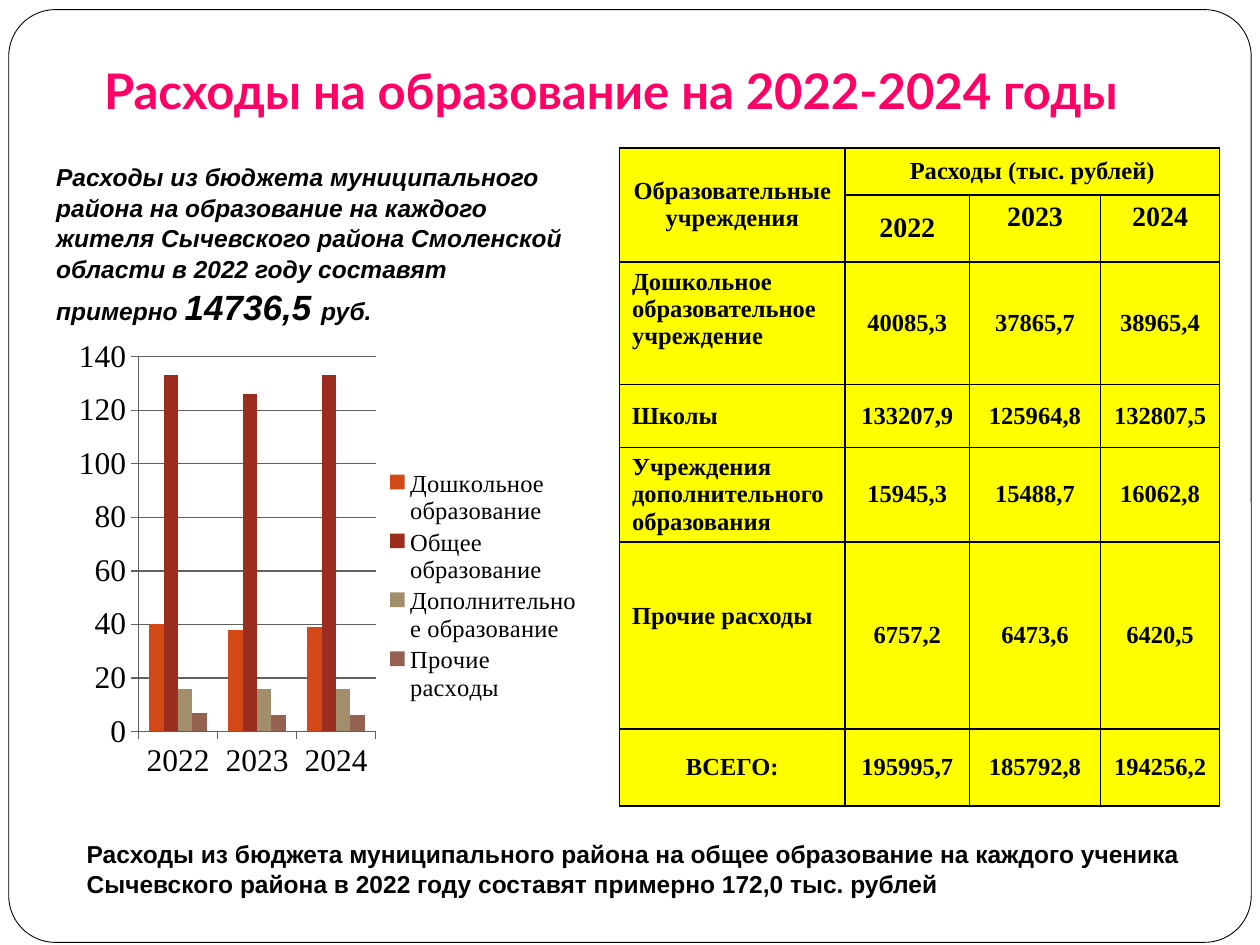
from lxml import etree
from pptx import Presentation
from pptx.chart.data import CategoryChartData
from pptx.dml.color import RGBColor
from pptx.enum.chart import XL_CHART_TYPE as ChartType, XL_LEGEND_POSITION as LegendPosition
from pptx.enum.shapes import MSO_SHAPE as Shape
from pptx.enum.text import MSO_ANCHOR as Anchor, MSO_AUTO_SIZE as AutoSize, PP_ALIGN as Align
from pptx.oxml.ns import qn
from pptx.util import Pt

SERIF = "Times New Roman"
BLACK, WHITE, YELLOW, PINK, GRID = "000000", "FFFFFF", "FFFF00", "FF0066", "606060"

COLUMN_WIDTHS = [129, 71, 75, 68]
ROW_HEIGHTS = [27, 38, 70, 36, 54, 107, 44]
EXPENSES = [
    ["Образовательные учреждения", "Расходы (тыс. рублей)", "", ""],
    ["", "2022", "2023", "2024"],
    ["Дошкольное образовательное учреждение", "40085,3", "37865,7", "38965,4"],
    ["Школы", "133207,9", "125964,8", "132807,5"],
    ["Учреждения \nдополнительного\nобразования", "15945,3", "15488,7", "16062,8"],
    ["Прочие расходы", "6757,2", "6473,6", "6420,5"],
    ["ВСЕГО:", "195995,7", "185792,8", "194256,2"],
]
YEARS = ["2022", "2023", "2024"]
SERIES = [
    ("Дошкольное образование", [40, 38, 39], "D34817"),
    ("Общее образование", [133, 126, 133], "9B2D1F"),
    ("Дополнительное образование", [16, 16, 16], "A28E6A"),
    ("Прочие расходы", [7, 6, 6], "956251"),
]


def color(value):
    return RGBColor.from_string(value)


def points(*lengths):
    return [Pt(length) for length in lengths]


def format_font(font, size, name=SERIF, fill=BLACK, bold=False, italic=False):
    font.size, font.name = Pt(size), name
    font.bold, font.italic = bold, italic
    font.color.rgb = color(fill)


def add_text(paragraph, text, align=None, spacing=None, **font_format):
    run = paragraph.add_run()
    run.text = text
    format_font(run.font, **font_format)
    if align is not None:
        paragraph.alignment = align
    if spacing is not None:
        paragraph.line_spacing = spacing


def add_frame(slide):
    frame = slide.shapes.add_shape(Shape.ROUNDED_RECTANGLE, *points(5, 5.5, 710, 533))
    frame.adjustments[0] = 0.05
    frame.shadow.inherit = False
    frame.fill.solid()
    frame.fill.fore_color.rgb = color(WHITE)
    frame.line.color.rgb = color(BLACK)
    frame.line.width = Pt(0.5)
    slide.shapes._spTree.insert(2, frame._element)


def set_title(slide, text):
    title = slide.shapes.title
    title.left, title.top, title.width, title.height = points(0, 20, 698, 55.5)
    text_frame = title.text_frame
    text_frame.auto_size = AutoSize.NONE
    text_frame.vertical_anchor = Anchor.BOTTOM
    text_frame.margin_bottom = Pt(7.2)
    add_text(text_frame.paragraphs[0], text, align=Align.CENTER,
             size=28, name="Lato", fill=PINK, bold=True)


def add_note(slide, place, runs, italic=False):
    """Add a text box whose runs are (text, size) pairs."""
    text_frame = slide.shapes.add_textbox(*points(*place)).text_frame
    text_frame.word_wrap = True
    text_frame.vertical_anchor = Anchor.MIDDLE
    for text, size in runs:
        add_text(text_frame.paragraphs[0], text, spacing=1.05,
                 size=size, name="Arial", bold=True, italic=italic)


def set_borders(cell):
    properties = cell._tc.get_or_add_tcPr()
    for index, side in enumerate(("lnL", "lnR", "lnT", "lnB")):
        line = etree.Element(qn(f"a:{side}"), w=str(Pt(1)))
        fill = etree.SubElement(line, qn("a:solidFill"))
        etree.SubElement(fill, qn("a:srgbClr"), val=BLACK)
        properties.insert(index, line)


def fill_cell(cell, text, size, align, anchor):
    cell.fill.solid()
    cell.fill.fore_color.rgb = color(YELLOW)
    cell.vertical_anchor = anchor
    set_borders(cell)
    for index, line in enumerate(text.split("\n") if text else []):
        text_frame = cell.text_frame
        paragraph = text_frame.add_paragraph() if index else text_frame.paragraphs[0]
        add_text(paragraph, line, align=align, size=size, bold=True)


def add_expense_table(slide):
    place = points(354, 84.5, sum(COLUMN_WIDTHS), sum(ROW_HEIGHTS))
    table = slide.shapes.add_table(len(ROW_HEIGHTS), len(COLUMN_WIDTHS), *place).table
    for column, width in zip(table.columns, COLUMN_WIDTHS):
        column.width = Pt(width)
    for row, height in zip(table.rows, ROW_HEIGHTS):
        row.height = Pt(height)
    table.cell(0, 0).merge(table.cell(1, 0))
    table.cell(0, 1).merge(table.cell(0, 3))

    top_cells = {(1, 2), (1, 3), (2, 0), (5, 0)}
    for row, texts in enumerate(EXPENSES):
        for column, text in enumerate(texts):
            is_label = column == 0 and 2 <= row <= 5
            align = Align.JUSTIFY if is_label else Align.CENTER
            anchor = Anchor.TOP if (row, column) in top_cells else Anchor.MIDDLE
            fill_cell(table.cell(row, column), text, 16 if row == 1 else 14, align, anchor)
    other_expenses = table.cell(5, 0)
    other_expenses.margin_top = Pt(34.5)
    other_expenses.text_frame.paragraphs[0].alignment = Align.LEFT


def set_layout(element, successors, target=None, **box):
    """Place a chart part by fractions of the chart area."""
    for old in element.findall(qn("c:layout")):
        element.remove(old)
    layout = etree.Element(qn("c:layout"))
    manual = etree.SubElement(layout, qn("c:manualLayout"))
    if target:
        etree.SubElement(manual, qn("c:layoutTarget"), val=target)
    for mode in ("xMode", "yMode"):
        etree.SubElement(manual, qn(f"c:{mode}"), val="edge")
    for name, value in box.items():
        etree.SubElement(manual, qn(f"c:{name}"), val=str(value))
    follower = next(child for child in element
                    if child.tag in [qn(f"c:{name}") for name in successors])
    follower.addprevious(layout)


def add_expense_chart(slide):
    data = CategoryChartData(number_format="0")
    data.categories = YEARS
    for name, values, _ in SERIES:
        data.add_series(name, values)
    chart = slide.shapes.add_chart(
        ChartType.COLUMN_CLUSTERED, *points(22.5, 186, 315, 297.5), data).chart
    format_font(chart.font, 18)
    chart.has_title = False

    plot = chart.plots[0]
    plot.gap_width, plot.overlap = 150, 0
    plot.vary_by_categories = False
    for series, (_, _, fill) in zip(plot.series, SERIES):
        series.format.fill.solid()
        series.format.fill.fore_color.rgb = color(fill)

    value_axis = chart.value_axis
    value_axis.minimum_scale, value_axis.maximum_scale, value_axis.major_unit = 0, 140, 20
    value_axis.has_major_gridlines = True
    for line in (value_axis.major_gridlines.format.line, value_axis.format.line,
                 chart.category_axis.format.line):
        line.color.rgb = color(GRID)
        line.width = Pt(0.75)

    chart.has_legend = True
    legend = chart.legend
    legend.position = LegendPosition.RIGHT
    legend.include_in_layout = False
    format_font(legend.font, 14)
    set_layout(plot._element.getparent(), ["barChart"], "inner", x=0.18, y=0.06, w=0.43, h=0.72)
    set_layout(legend._element, ["overlay"], x=0.63, y=0.27, w=0.35, h=0.46)


def main():
    presentation = Presentation()
    presentation.slide_width, presentation.slide_height = points(720, 540)
    slide = presentation.slides.add_slide(presentation.slide_layouts[5])
    add_frame(slide)
    set_title(slide, "Расходы на образование на 2022-2024 годы")
    add_expense_table(slide)
    add_note(slide, (25, 88.5, 306, 102), [
        ("Расходы из бюджета муниципального района на образование на каждого жителя "
         "Сычевского района Смоленской области в 2022 году составят примерно ", 14),
        ("14736,5 ", 20),
        ("руб.", 14),
    ], italic=True)
    add_note(slide, (42.5, 479.5, 648, 33), [
        ("Расходы из бюджета муниципального района на общее образование на каждого ученика "
         "Сычевского района в 2022 году составят примерно 172,0 тыс. рублей", 14),
    ])
    add_expense_chart(slide)
    presentation.save("out.pptx")


if __name__ == "__main__":
    main()
